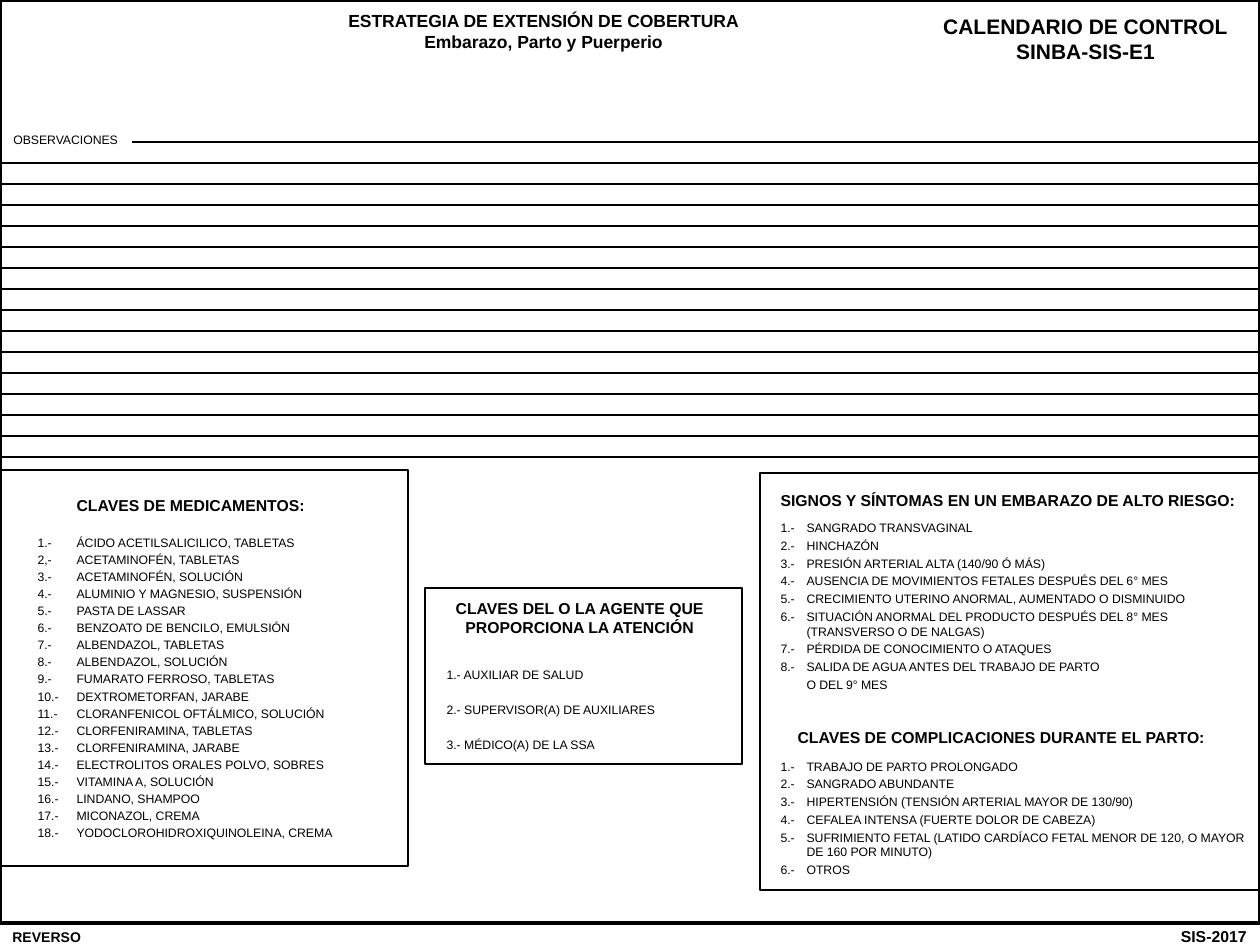
from dataclasses import dataclass

from lxml.etree import SubElement
from pptx import Presentation
from pptx.dml.color import RGBColor
from pptx.enum.shapes import MSO_CONNECTOR as Connector, MSO_SHAPE as Preset
from pptx.enum.text import MSO_ANCHOR as Anchor, MSO_AUTO_SIZE as AutoSize, PP_ALIGN as Align
from pptx.oxml.ns import qn
from pptx.util import Emu, Pt

COMPARISON_LAYOUT = 4


@dataclass(frozen=True)
class Theme:
    font: str = "Arial"
    ink: RGBColor = RGBColor(0, 0, 0)
    form_name: int = 12
    title: int = 10
    heading: int = 9
    footer: int = 8
    body: int = 7
    frame: float = 2.5
    rule: float = 1


def px(length):
    return Emu(round(length * 914400 / 126))


def numbered(items, separator="\t"):
    return [f"{number}.-{separator}{item}" for number, item in enumerate(items, 1)]


class Form:
    """Holds the theme and the current page, and draws each kind of element."""

    def __init__(self, page, theme):
        self.page = page
        self.theme = theme

    def rectangle(self, left, top, width, height, weight):
        box = self.page.shapes.add_shape(
            Preset.RECTANGLE, px(left), px(top), px(width), px(height))
        box.shadow.inherit = False
        box.fill.background()
        box.line.color.rgb = self.theme.ink
        box.line.width = Pt(weight)

    def rule(self, left, right, y):
        line = self.page.shapes.add_connector(
            Connector.STRAIGHT, px(left), px(y), px(right), px(y))
        line.line.color.rgb = self.theme.ink
        line.line.width = Pt(self.theme.rule)
        SubElement(line._element.spPr, qn("a:effectLst"))

    def prepare(self, box, left, top, width, height):
        """Place a text box or placeholder and give it a plain text frame."""
        box.left, box.top, box.width, box.height = map(px, (left, top, width, height))
        frame = box.text_frame
        frame.word_wrap = True
        frame.auto_size = AutoSize.NONE
        frame.vertical_anchor = Anchor.TOP
        return frame

    def style(self, para, size, bold=False, align=Align.LEFT, before=0, margin=0, hang=0):
        properties = para._p.get_or_add_pPr()
        properties.set("marL", str(px(margin)))
        properties.set("indent", str(px(-hang)))
        SubElement(properties, qn("a:buNone"))
        para.alignment = align
        para.line_spacing = 1.0
        para.space_before = Pt(before)
        para.space_after = Pt(0)
        for span in para.runs:
            span.font.name = self.theme.font
            span.font.size = Pt(size)
            span.font.bold = bold
            span.font.color.rgb = self.theme.ink

    def text(self, text, place, size, bold=True, align=Align.LEFT, box=None):
        box = box or self.page.shapes.add_textbox(0, 0, 0, 0)
        frame = self.prepare(box, *place)
        frame.text = text
        for para in frame.paragraphs:
            self.style(para, size, bold, align)

    def key_list(self, box, place, sections, before, hang=0):
        """Fill a body placeholder with sections of a heading and its items.

        A section is (heading, heading layout, gap above the items, items).
        """
        frame = self.prepare(box, *place)
        frame.text = "\n".join(
            line for heading, _, _, items in sections for line in (heading, *items))
        paragraphs = iter(frame.paragraphs)
        for _, heading_layout, gap, items in sections:
            self.style(next(paragraphs), self.theme.heading, True, **heading_layout)
            for index in range(len(items)):
                self.style(next(paragraphs), self.theme.body, margin=hang, hang=hang,
                           before=before if index else gap)


MEDICINES = numbered([
    "ÁCIDO ACETILSALICILICO, TABLETAS",
    "ACETAMINOFÉN, TABLETAS",
    "ACETAMINOFÉN, SOLUCIÓN",
    "ALUMINIO Y MAGNESIO, SUSPENSIÓN",
    "PASTA DE LASSAR",
    "BENZOATO DE BENCILO, EMULSIÓN",
    "ALBENDAZOL, TABLETAS",
    "ALBENDAZOL, SOLUCIÓN",
    "FUMARATO FERROSO, TABLETAS",
    "DEXTROMETORFAN, JARABE",
    "CLORANFENICOL OFTÁLMICO, SOLUCIÓN",
    "CLORFENIRAMINA, TABLETAS",
    "CLORFENIRAMINA, JARABE",
    "ELECTROLITOS ORALES POLVO, SOBRES",
    "VITAMINA A, SOLUCIÓN",
    "LINDANO, SHAMPOO",
    "MICONAZOL, CREMA",
    "YODOCLOROHIDROXIQUINOLEINA, CREMA",
])
MEDICINES[1] = MEDICINES[1].replace("2.-", "2,-")

RISK_SIGNS = numbered([
    "SANGRADO TRANSVAGINAL",
    "HINCHAZÓN",
    "PRESIÓN ARTERIAL ALTA (140/90 Ó MÁS)",
    "AUSENCIA DE MOVIMIENTOS FETALES DESPUÉS DEL 6° MES",
    "CRECIMIENTO UTERINO ANORMAL, AUMENTADO O DISMINUIDO",
    "SITUACIÓN ANORMAL DEL PRODUCTO DESPUÉS DEL 8° MES (TRANSVERSO O DE NALGAS)",
    "PÉRDIDA DE CONOCIMIENTO O ATAQUES",
    "SALIDA DE AGUA ANTES DEL TRABAJO DE PARTO",
]) + ["\tO DEL 9° MES"]

COMPLICATIONS = numbered([
    "TRABAJO DE PARTO PROLONGADO",
    "SANGRADO ABUNDANTE",
    "HIPERTENSIÓN (TENSIÓN ARTERIAL MAYOR DE 130/90)",
    "CEFALEA INTENSA (FUERTE DOLOR DE CABEZA)",
    "SUFRIMIENTO FETAL (LATIDO CARDÍACO FETAL MENOR DE 120, O MAYOR DE 160 POR MINUTO)",
    "OTROS",
])

AGENTS = numbered(
    ["AUXILIAR DE SALUD", "SUPERVISOR(A) DE AUXILIARES", "MÉDICO(A) DE LA SSA"], " ")


def main():
    deck = Presentation()
    deck.slide_width, deck.slide_height = px(1260), px(945)
    page = deck.slides.add_slide(deck.slide_layouts[COMPARISON_LAYOUT])
    title, medicines, risks, agents, unused = page.placeholders
    unused._element.getparent().remove(unused._element)
    theme = Theme()
    form = Form(page, theme)

    form.rectangle(0, 0, 1260, 923, theme.frame)
    form.text("ESTRATEGIA DE EXTENSIÓN DE COBERTURA\nEmbarazo, Parto y Puerperio",
              (160, 4, 767, 54), theme.title, align=Align.CENTER, box=title)
    form.text("CALENDARIO DE CONTROL\nSINBA-SIS-E1",
              (911, 7, 349, 63), theme.form_name, align=Align.CENTER)
    form.text("SIS-2017", (1131, 921, 128, 57), theme.heading, align=Align.RIGHT)
    form.text("REVERSO", (0, 922, 111, 29), theme.footer)

    form.text("OBSERVACIONES", (1, 126, 140, 28), theme.body, bold=False)
    for row in range(16):
        form.rule(0 if row else 132, 1260, 142 + 21 * row)

    for place in ((0, 470, 408, 396), (760, 473, 500, 417), (425, 588, 317, 176)):
        form.rectangle(*place, theme.rule)
    form.key_list(medicines, (25, 489, 355, 358), [
        ("CLAVES DE MEDICAMENTOS:", {"margin": 39}, 11.7, MEDICINES),
    ], before=1.4, hang=39)
    form.key_list(risks, (768, 484, 492, 403), [
        ("SIGNOS Y SÍNTOMAS EN UN EMBARAZO DE ALTO RIESGO:", {}, 6.3, RISK_SIGNS),
        ("CLAVES DE COMPLICACIONES DURANTE EL PARTO:",
         {"margin": 17, "before": 20.5}, 7, COMPLICATIONS),
    ], before=1.75, hang=26)
    form.key_list(agents, (434, 592, 291, 168), [
        ("CLAVES DEL O LA AGENTE QUE PROPORCIONA LA ATENCIÓN",
         {"align": Align.CENTER}, 18, AGENTS),
    ], before=11.4)

    deck.save("out.pptx")


if __name__ == "__main__":
    main()
